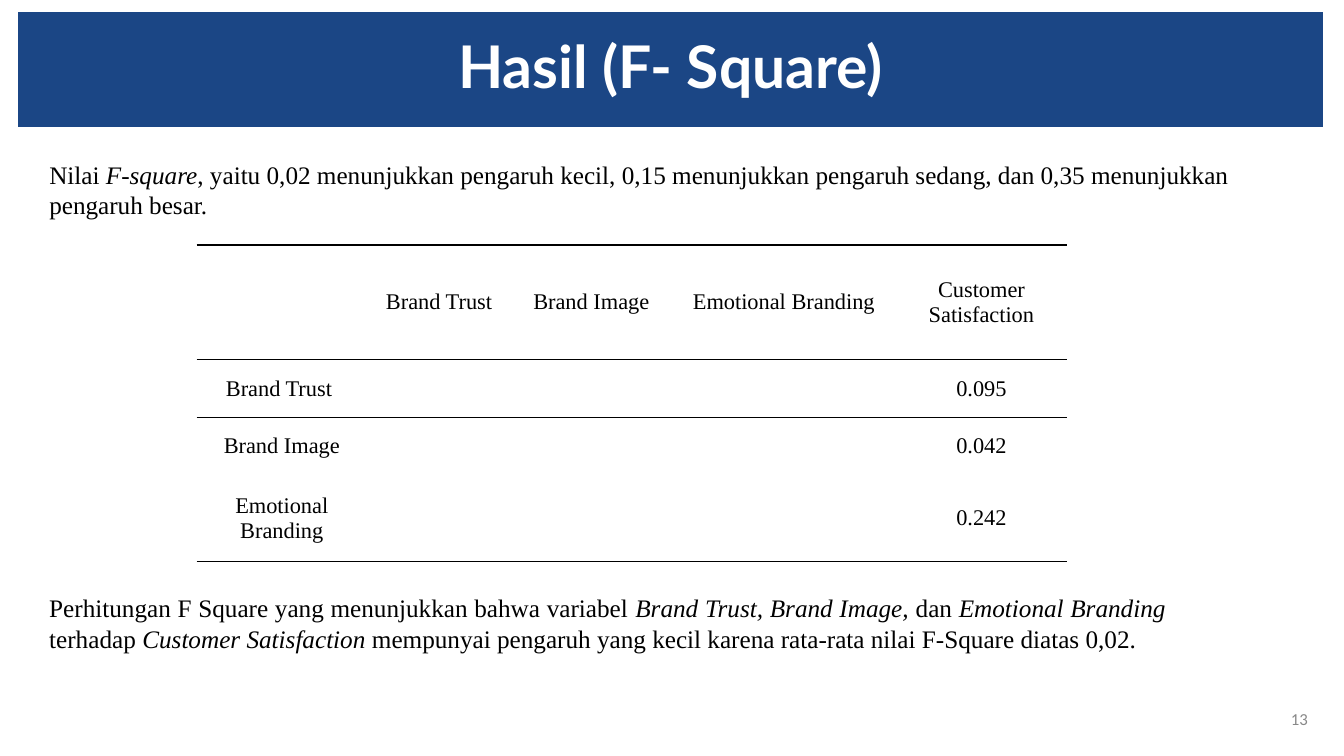
from lxml import etree
from pptx import Presentation
from pptx.dml.color import RGBColor
from pptx.enum.shapes import MSO_SHAPE
from pptx.enum.text import MSO_ANCHOR, PP_ALIGN
from pptx.oxml.ns import qn
from pptx.util import Inches, Pt

RECT = MSO_SHAPE.RECTANGLE
MIDDLE, TOP = MSO_ANCHOR.MIDDLE, MSO_ANCHOR.TOP
LEFT, CENTER = PP_ALIGN.LEFT, PP_ALIGN.CENTER
RIGHT, JUSTIFY = PP_ALIGN.RIGHT, PP_ALIGN.JUSTIFY
BLUE = RGBColor(0x1B, 0x46, 0x85)
WHITE = RGBColor(0xFF, 0xFF, 0xFF)
BLACK = RGBColor(0, 0, 0)
GRAY = RGBColor(0x88, 0x88, 0x88)
SERIF = "Times New Roman"
NO_STYLE = "{2D5ABB26-0587-4C30-8999-92F81FD0307C}"


def write(tf, *texts, size=18, font=SERIF, color=BLACK, bold=False,
          align=LEFT, anchor=TOP, spacing=None):
    tf.word_wrap = True
    tf.vertical_anchor = anchor
    p = tf.paragraphs[0]
    p.alignment = align
    p.line_spacing = spacing
    for i, text in enumerate(texts):
        r = p.add_run()
        r.text = text
        r.font.size, r.font.name, r.font.bold = Pt(size), font, bold
        r.font.italic = i % 2 == 1
        r.font.color.rgb = color


def add_border(cell, side):
    tcPr = cell._tc.get_or_add_tcPr()
    ln = etree.Element(qn("a:" + side), w=str(Pt(1)))
    fill = etree.SubElement(ln, qn("a:solidFill"))
    etree.SubElement(fill, qn("a:srgbClr"), val=str(BLACK))
    tcPr.insert(0, ln)


prs = Presentation()
prs.slide_width, prs.slide_height = Inches(13.33), Inches(7.5)
s = prs.slides.add_slide(prs.slide_layouts[6])

sp = s.shapes.add_textbox(Inches(12.5), Inches(6.93), Inches(0.57), Inches(0.4))
write(sp.text_frame, "13", size=12, font="Calibri", color=GRAY,
      align=RIGHT, anchor=MIDDLE)

sp = s.shapes.add_shape(RECT, Inches(0.18), Inches(0.12), Inches(12.94), Inches(1.14))
sp.shadow.inherit = False
sp.fill.solid()
sp.fill.fore_color.rgb = BLUE
sp.line.fill.background()
write(sp.text_frame, "Hasil (F- Square)", size=42, font="Lato", color=WHITE,
      bold=True, align=CENTER, anchor=MIDDLE, spacing=0.9)

rows = [
    ["", "Brand Trust", "Brand Image", "Emotional Branding", "Customer Satisfaction"],
    ["Brand Trust ", "", "", "", "0.095"],
    ["Brand Image", "", "", "", "0.042"],
    ["Emotional Branding", "", "", "", "0.242"],
]
widths = [1.69, 1.43, 1.59, 2.23, 1.69]
heights = [1.14, 0.57, 0.57, 0.86]
borders = {0: ["lnB", "lnT"], 1: ["lnT"], 3: ["lnB"]}

frame = s.shapes.add_table(len(rows), len(widths), Inches(1.95), Inches(2.43),
                           Inches(sum(widths)), Inches(sum(heights)))
table = frame.table
table.first_row = table.horz_banding = False
table._tbl.tblPr.find(qn("a:tableStyleId")).text = NO_STYLE
for col, width in zip(table.columns, widths):
    col.width = Inches(width)
for i, (row, height) in enumerate(zip(rows, heights)):
    table.rows[i].height = Inches(height)
    for j, text in enumerate(row):
        cell = table.cell(i, j)
        cell.fill.background()
        cell.margin_left = cell.margin_right = Inches(0.07)
        cell.margin_top = cell.margin_bottom = 0
        cell.vertical_anchor = MIDDLE
        if text:
            write(cell.text_frame, text, size=16, align=CENTER, anchor=None)
        for side in borders.get(i, []):
            add_border(cell, side)

sp = s.shapes.add_textbox(Inches(0.39), Inches(1.53), Inches(12.52), Inches(0.71))
write(sp.text_frame, "Nilai ", "F-square",
      ", yaitu 0,02 menunjukkan pengaruh kecil, 0,15 menunjukkan pengaruh sedang, "
      "dan 0,35 menunjukkan pengaruh besar.")

sp = s.shapes.add_textbox(Inches(0.39), Inches(5.83), Inches(11.27), Inches(1.01))
write(sp.text_frame, "Perhitungan F Square yang menunjukkan bahwa variabel ",
      "Brand Trust, Brand Image, ", "dan ", "Emotional Branding", " terhadap ",
      "Customer Satisfaction",
      " mempunyai pengaruh yang kecil karena rata-rata nilai F-Square diatas 0,02.",
      align=JUSTIFY)

prs.save("out.pptx")
